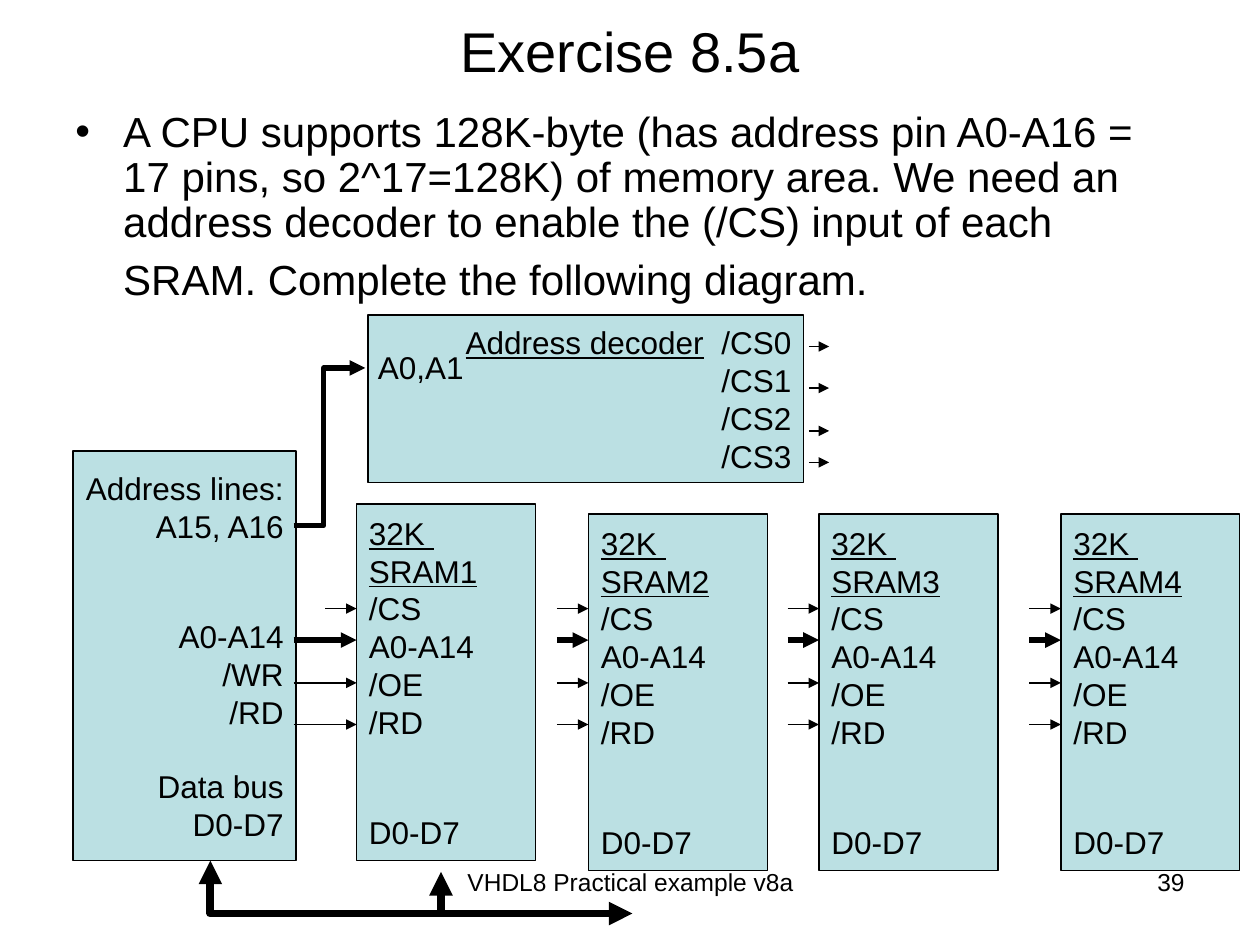
from lxml import etree
from pptx import Presentation
from pptx.dml.color import RGBColor
from pptx.enum import shapes, text
from pptx.oxml import ns
from pptx.util import Inches, Pt

BLACK = RGBColor(0x00, 0x00, 0x00)
BLOCK_FILL = RGBColor(0xBB, 0xE0, 0xE3)
FONT = "Arial"
LINE_HEIGHT = 20.7  # one 18 pt text line, in points
LEFT, CENTER, RIGHT = text.PP_ALIGN.LEFT, text.PP_ALIGN.CENTER, text.PP_ALIGN.RIGHT
TOP, MIDDLE = text.MSO_ANCHOR.TOP, text.MSO_ANCHOR.MIDDLE
THIN, THICK, BUS = 0.75, 3, 4.5

# Each row: blank lines above it, then its (wording, underlined) spans
CPU_ROWS = [
    (0, [("Address lines:", False)]),
    (0, [("A15, A16", False)]),
    (2, [("A0-A14", False)]),
    (0, [("/WR", False)]),
    (0, [("/RD", False)]),
    (1, [("Data bus", False)]),
    (0, [("D0-D7", False)]),
]
DECODER_ROWS = [(0, [("Address decoder", True), ("  /CS0", False)])] + [
    (0, [(f"/CS{number}", False)]) for number in (1, 2, 3)
]
SRAM_PINS = [(0, "/CS"), (0, "A0-A14"), (0, "/OE"), (0, "/RD"), (2, "D0-D7")]

# Left and top of each memory, and where its pin arrows begin
SRAMS = [
    (2.83, 4.0, (2.58, 2.33, 2.33, 2.33)),
    (4.67, 4.08, (4.42,) * 4),
    (6.5, 4.08, (6.25,) * 4),
    (8.42, 4.08, (8.17,) * 4),
]
PIN_ARROWS = [(4.83, THIN), (5.08, THICK), (5.42, THIN), (5.75, THIN)]
SELECT_HEIGHTS = (2.75, 3.08, 3.42, 3.67)


def set_values(target, values):
    for name, value in values.items():
        setattr(target, name, value)


def add_span(para, wording, size, underline=False):
    span = para.add_run()
    span.text = wording
    set_values(span.font, {"name": FONT, "size": Pt(size), "underline": underline})
    span.font.color.rgb = BLACK


def fill_rows(frame, rows, size, align):
    for index, (gap, spans) in enumerate(rows):
        para = frame.add_paragraph() if index else frame.paragraphs[0]
        set_values(para, {"alignment": align, "space_before": Pt(gap * LINE_HEIGHT)})
        for wording, underline in spans:
            add_span(para, wording, size, underline)


def add_label(page, place, wording, size, align=LEFT, anchor=TOP, wrap=True):
    box = page.shapes.add_textbox(*map(Inches, place))
    set_values(box.text_frame, {"word_wrap": wrap, "vertical_anchor": anchor})
    if wording:
        fill_rows(box.text_frame, [(0, [(wording, False)])], size, align)
    return box


def add_block(page, place, rows, align):
    block = page.shapes.add_shape(
        shapes.MSO_SHAPE.RECTANGLE, *map(Inches, place))
    block.shadow.inherit = False
    block.fill.solid()
    block.fill.fore_color.rgb = BLOCK_FILL
    block.line.color.rgb = BLACK
    block.line.width = Pt(THIN)
    set_values(block.text_frame, {"word_wrap": False, "vertical_anchor": MIDDLE})
    fill_rows(block.text_frame, rows, 18, align)


def style_line(line, width, ends):
    """Colour a line and put triangles on the ends named (headEnd, tailEnd)."""
    line.color.rgb = BLACK
    line.width = Pt(width)
    properties = line._get_or_add_ln()
    for end in ends:
        etree.SubElement(properties, ns.qn(f"a:{end}"), type="triangle")


def add_arrow(page, start, end, width):
    arrow = page.shapes.add_connector(
        shapes.MSO_CONNECTOR.STRAIGHT, *map(Inches, start + end))
    style_line(arrow.line, width, ["tailEnd"])
    etree.SubElement(arrow._element.spPr, ns.qn("a:effectLst"))


def add_bent_arrow(page, points, width, ends):
    corners = [(Inches(x), Inches(y)) for x, y in points]
    builder = page.shapes.build_freeform(*corners[0])
    builder.add_line_segments(corners[1:], close=False)
    route = builder.convert_to_shape()
    route.fill.background()
    style_line(route.line, width, ends)
    route.shadow.inherit = False


def add_question(page):
    box = add_label(page, (0.5, 0.83, 9, 1.67), "", 24)
    para = box.text_frame.paragraphs[0]
    set_values(para, {"line_spacing": 0.9, "alignment": LEFT})
    add_span(para, "A CPU supports 128K-byte (has address pin A0-A16 = 17 pins, "
                   "so 2^17=128K) of memory area. We need an address decoder to "
                   "enable the (/CS) input of each SRAM. Complete the following "
                   "diagram.", 24)
    add_span(para, " ", 32)
    properties = para._p.get_or_add_pPr()
    properties.set("marL", str(Inches(0.38)))
    properties.set("indent", str(Inches(-0.38)))
    etree.SubElement(properties, ns.qn("a:buFont"), typeface=FONT)
    etree.SubElement(properties, ns.qn("a:buChar"), char="•")


def add_sram(page, number, left, top, starts):
    rows = [(0, [("32K ", True)]), (0, [(f"SRAM{number}", True), (" ", False)])]
    rows += [(gap, [(pin, False)]) for gap, pin in SRAM_PINS]
    add_block(page, (left, top, 1.42, 2.83), rows, LEFT)
    for start, (height, width) in zip(starts, PIN_ARROWS):
        add_arrow(page, (start, height), (left, height), width)


def main():
    deck = Presentation()
    deck.slide_width, deck.slide_height = Inches(10), Inches(7.5)
    page = deck.slides.add_slide(deck.slide_layouts[6])

    add_label(page, (3.42, 6.83, 3.17, 0.52), "VHDL8 Practical example v8a", 14, CENTER)
    add_label(page, (7.17, 6.83, 2.33, 0.52), "39", 14, RIGHT)
    add_label(page, (0.5, 0.3, 9, 0.2), "Exercise 8.5a", 32, CENTER, MIDDLE)

    add_block(page, (0.58, 3.58, 1.77, 3.25), CPU_ROWS, RIGHT)
    add_block(page, (2.92, 2.5, 3.46, 1.33), DECODER_ROWS, RIGHT)
    add_bent_arrow(page, [(1.67, 6.83), (1.67, 7.25), (3.5, 7.25), (3.5, 6.92)],
                   BUS, ["headEnd", "tailEnd"])
    add_arrow(page, (3.42, 7.25), (5.02, 7.25), BUS)
    add_bent_arrow(page, [(2.33, 4.17), (2.57, 4.17), (2.57, 2.92), (2.9, 2.92)],
                   THICK, ["tailEnd"])
    add_label(page, (2.9, 2.71, 0.88, 0.4), "A0,A1", 18, wrap=False)
    for height in SELECT_HEIGHTS:
        add_arrow(page, (6.42, height), (6.58, height), THIN)

    add_question(page)
    for number, (left, top, starts) in enumerate(SRAMS, 1):
        add_sram(page, number, left, top, starts)

    deck.save("out.pptx")


if __name__ == "__main__":
    main()
